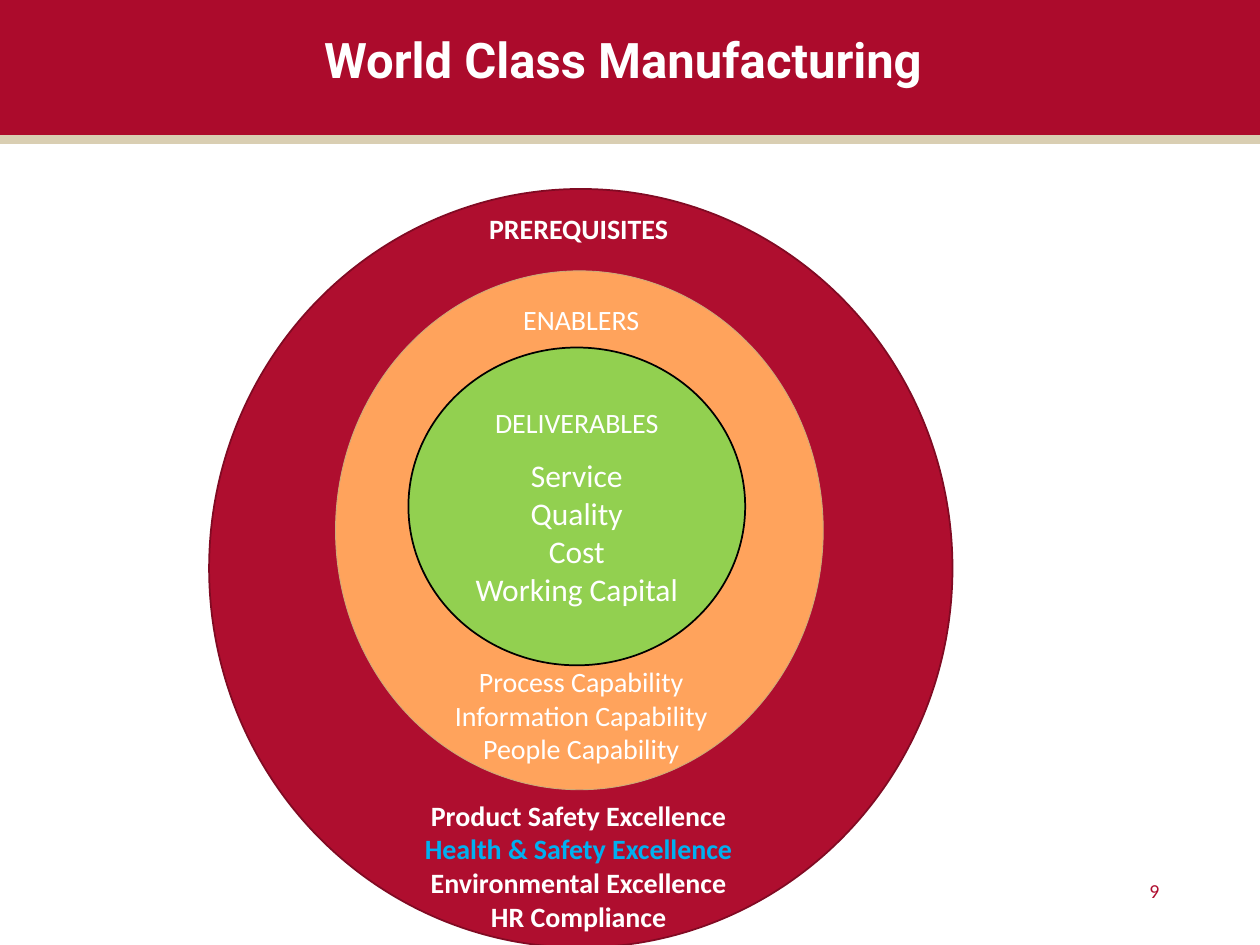
import pptx
import pptx.util
import pptx.dml.color
import pptx.enum.shapes
import pptx.enum.text

COLORS = {
    "banner": "AC0B2C", "sand": "D9CEB2", "white": "FFFFFF",
    "crimson": "AF0E2F", "maroon": "810A23", "orange": "FFA35C",
    "tan": "CDAB79", "green": "92D050", "black": "000000", "blue": "00B0F0",
}
WIDTH, HEIGHT = 10, 7.5
ALIGN = pptx.enum.text.PP_ALIGN
MIDDLE = pptx.enum.text.MSO_ANCHOR.MIDDLE
SHAPES = pptx.enum.shapes.MSO_SHAPE


def rgb(name):
    return pptx.dml.color.RGBColor.from_string(COLORS[name])


def inches(box):
    return [pptx.util.Inches(length) for length in box]


def within(box, left, top, width, height):
    x, y, w, h = box
    return x + left * w, y + top * h, width * w, height * h


def add_filled(slide, kind, box, fill, line, weight):
    figure = slide.shapes.add_shape(kind, *inches(box))
    figure.shadow.inherit = False
    figure.fill.solid()
    figure.fill.fore_color.rgb = rgb(fill)
    figure.line.color.rgb = rgb(line)
    figure.line.width = pptx.util.Pt(weight)
    return figure


def style(paragraph, size, color="white", bold=False, font="Calibri", align=ALIGN.CENTER):
    paragraph.alignment = align
    for run in paragraph.runs:
        run.font.name = font
        run.font.size = pptx.util.Pt(size)
        run.font.bold = bold
        run.font.color.rgb = rgb(color)


def write_ring(frame, heading, items, gap, item_size=16, bold=False):
    frame.word_wrap = True
    frame.text = "\n".join([heading, *items])
    style(frame.paragraphs[0], 16, bold=bold)
    for paragraph in frame.paragraphs[1:]:
        style(paragraph, item_size, bold=bold)
    frame.paragraphs[1].space_before = pptx.util.Pt(gap)


def add_header(slide, box):
    banner = add_filled(slide, SHAPES.RECTANGLE, box, "banner", "sand", 5)
    title = slide.shapes.title
    title._element.addprevious(banner._element)
    title.left, title.top, title.width, title.height = inches(
        within(box, 0.015, 0.287, 0.958, 0.426))
    frame = title.text_frame
    frame.text = "World Class Manufacturing"
    frame.vertical_anchor = MIDDLE
    frame.margin_left = frame.margin_right = frame.margin_top = frame.margin_bottom = 0
    frame.paragraphs[0].line_spacing = 0.9
    style(frame.paragraphs[0], 28, bold=True, font="Roboto")


def add_rings(slide, box):
    enablers_box = within(box, 0.17, 0.108, 0.656, 0.684)
    deliverables_box = within(box, 0.268, 0.209, 0.453, 0.419)
    add_filled(slide, SHAPES.OVAL, box, "crimson", "maroon", 1)
    add_filled(slide, SHAPES.OVAL, enablers_box, "orange", "tan", 0.5)
    core = add_filled(slide, SHAPES.OVAL, deliverables_box, "green", "black", 1)
    core.text_frame.vertical_anchor = MIDDLE
    write_ring(core.text_frame, "DELIVERABLES",
               ["Service", "Quality", "Cost", "Working Capital"], 10, item_size=18)

    prerequisites = slide.shapes.add_textbox(
        *inches(within(box, 0.181, 0.022, 0.632, 0.978))).text_frame
    write_ring(prerequisites, "PREREQUISITES",
               ["Product Safety Excellence", "Health & Safety Excellence",
                "Environmental Excellence", "HR Compliance"], 316, bold=True)
    style(prerequisites.paragraphs[2], 16, "blue", bold=True)

    enablers = slide.shapes.add_textbox(
        *inches(within(box, 0.232, 0.141, 0.537, 0.635))).text_frame
    write_ring(enablers, "ENABLERS",
               ["Process Capability", "Information Capability", "People Capability"], 188)


def add_page_number(slide, box):
    frame = slide.shapes.add_textbox(*inches(box)).text_frame
    frame.word_wrap = True
    frame.vertical_anchor = MIDDLE
    frame.text = "9"
    style(frame.paragraphs[0], 11.3, "crimson", align=ALIGN.RIGHT)


def main():
    deck = pptx.Presentation()
    deck.slide_width, deck.slide_height = inches((WIDTH, HEIGHT))
    slide = deck.slides.add_slide(deck.slide_layouts[5])
    page = (0, 0, WIDTH, HEIGHT)
    add_header(slide, (-0.12, -0.11, 10.25, 1.22))
    add_rings(slide, (1.66, 1.5, 5.9, 6.02))
    add_page_number(slide, within(page, 0.82, 0.93, 0.11, 0.025))
    deck.save("out.pptx")


if __name__ == "__main__":
    main()
